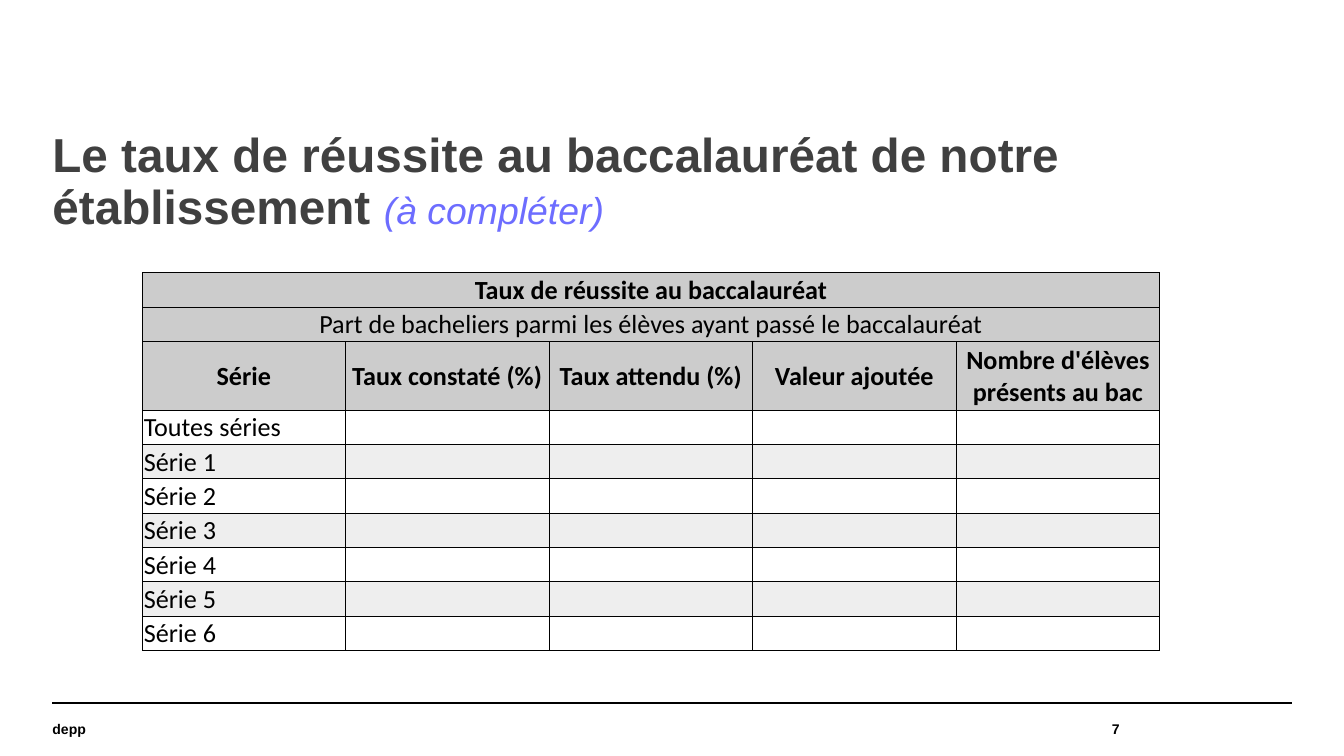
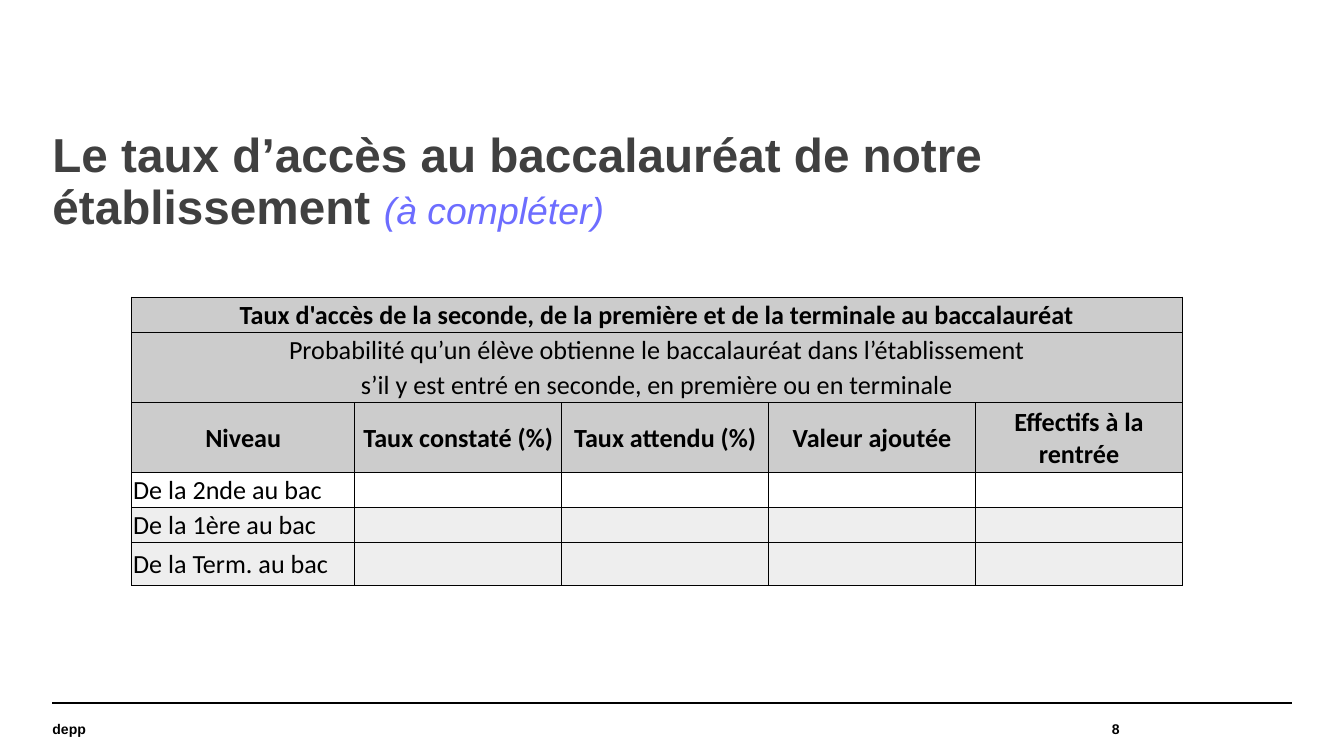
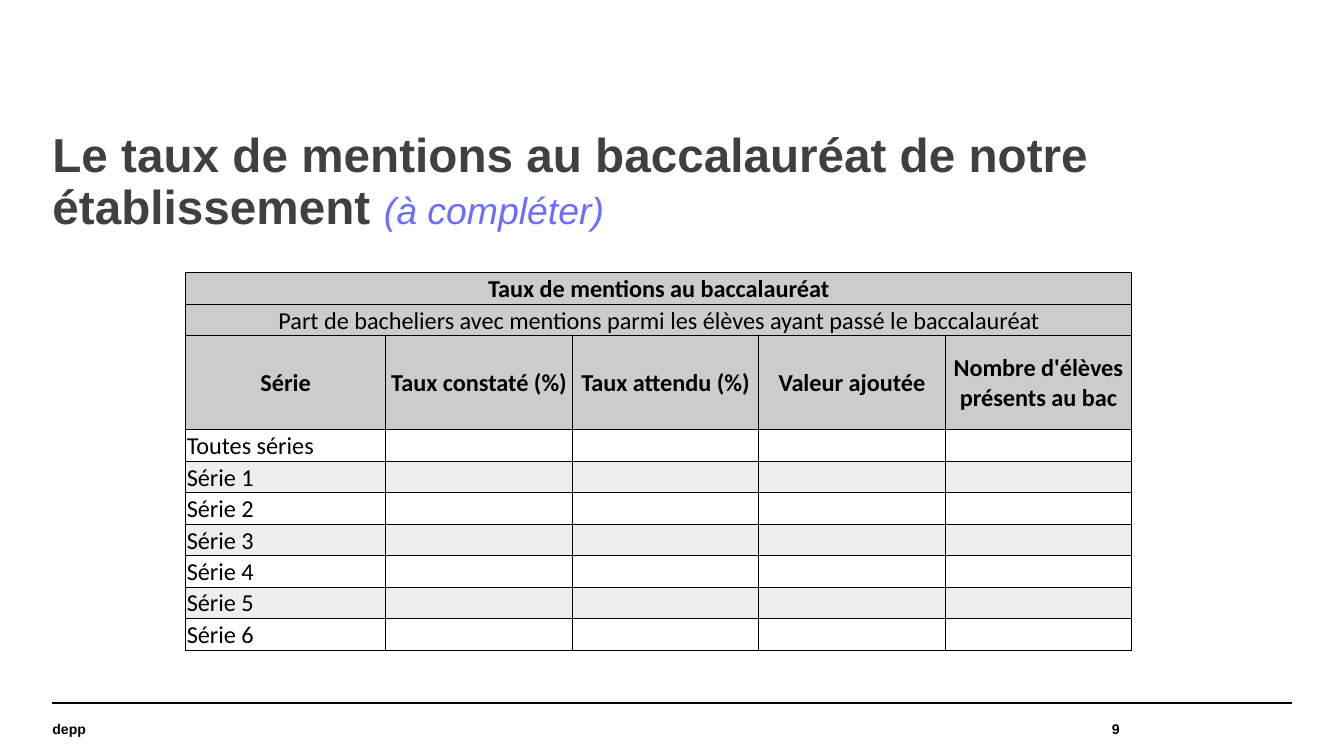
from lxml.etree import SubElement
from pptx import Presentation
from pptx.dml.color import RGBColor
from pptx.enum.shapes import MSO_CONNECTOR
from pptx.enum.text import MSO_ANCHOR, MSO_AUTO_SIZE, PP_ALIGN
from pptx.oxml.ns import qn
from pptx.util import Inches, Pt

BLACK = RGBColor(0x00, 0x00, 0x00)
TITLE_GREY = RGBColor(0x40, 0x40, 0x40)
NOTE_BLUE = RGBColor(0x6D, 0x6D, 0xFF)
HEADER_GREY = RGBColor(0xCC, 0xCC, 0xCC)
BAND_GREY = RGBColor(0xEE, 0xEE, 0xEE)

LEFT, RIGHT, FOOTER_TOP = 0.39, 9.61, 5.23
RATES = ["Taux constaté (%)", "Taux attendu (%)", "Valeur ajoutée"]
SERIES = ["Toutes séries"] + [f"Série {number}" for number in range(1, 7)]

# at: left, top, width, height; tall_rows: heights of the rows that differ
PAGES = [
    dict(title="Le taux de réussite au baccalauréat de notre établissement ",
         at=(1.06, 2.03, 7.57, 2.81), first_column=1.51, tall_rows={2: 0.51}, size=14,
         banners=["Taux de réussite au baccalauréat",
                  "Part de bacheliers parmi les élèves ayant passé le baccalauréat"],
         headings=["Série", *RATES, "Nombre d'élèves présents au bac"],
         labels=SERIES, shaded=(1, 3, 5)),
    dict(title="Le taux d’accès au baccalauréat de notre établissement ",
         at=(0.98, 2.21, 7.82, 2.15), first_column=1.66, tall_rows={3: 0.52, 6: 0.32}, size=14,
         banners=["Taux d'accès de la seconde, de la première et de la terminale au baccalauréat",
                  "Probabilité qu’un élève obtienne le baccalauréat dans l’établissement",
                  "s’il y est entré en seconde, en première ou en terminale"],
         headings=["Niveau", *RATES, "Effectifs à la rentrée"],
         labels=["De la 2nde au bac", "De la 1ère au bac", "De la Term. au bac"],
         shaded=(1, 2)),
    dict(title="Le taux de mentions au baccalauréat de notre établissement ",
         at=(1.38, 2.03, 7.04, 2.81), first_column=1.49, tall_rows={2: 0.7}, size=13,
         banners=["Taux de mentions au baccalauréat",
                  "Part de bacheliers avec mentions parmi les élèves ayant passé le baccalauréat"],
         headings=["Série", *RATES, "Nombre d'élèves présents au bac"],
         labels=SERIES, shaded=(1, 3, 5)),
]


def set_borders(cell, hidden):
    """Draw thin black borders, except on the sides listed in hidden."""
    properties = cell._tc.get_or_add_tcPr()
    for side in "LRTB":
        line = SubElement(properties, qn(f"a:ln{side}"), w=str(Pt(0.5)))
        if side in hidden:
            SubElement(line, qn("a:noFill"))
        else:
            fill = SubElement(line, qn("a:solidFill"))
            SubElement(fill, qn("a:srgbClr"), val=str(BLACK))


def add_footer_text(slide, text, left, width, alignment):
    box = slide.shapes.add_textbox(Inches(left), Inches(FOOTER_TOP), Inches(width), Inches(0.39))
    frame = box.text_frame
    frame.word_wrap = True
    frame.vertical_anchor = MSO_ANCHOR.MIDDLE
    frame.margin_left = frame.margin_right = frame.margin_top = frame.margin_bottom = 0
    para = frame.paragraphs[0]
    para.text = text
    para.alignment = alignment
    para.font.name, para.font.size, para.font.bold = "Arial", Pt(7.5), True
    para.font.color.rgb = BLACK


deck = Presentation()
deck.slide_width = Inches(10)
deck.slide_height = deck.slide_width * 9 // 16

for page_number, page in enumerate(PAGES, start=7):
    slide = deck.slides.add_slide(deck.slide_layouts[5])

    # Title
    title = slide.shapes.title
    title.left, title.top = Inches(LEFT), Inches(0.98)
    title.width, title.height = Inches(RIGHT - LEFT), Inches(0.79)
    frame = title.text_frame
    frame.word_wrap = True
    frame.auto_size = MSO_AUTO_SIZE.NONE
    frame.vertical_anchor = MSO_ANCHOR.TOP
    frame.margin_left = frame.margin_right = frame.margin_top = frame.margin_bottom = 0
    para = frame.paragraphs[0]
    para.alignment = PP_ALIGN.LEFT
    para.line_spacing = 0.9
    for text, size, color, is_note in [(page["title"], 25.5, TITLE_GREY, False),
                                       ("(à compléter)", 20, NOTE_BLUE, True)]:
        span = para.add_run()
        span.text = text
        span.font.name, span.font.size = "Arial", Pt(size)
        span.font.bold, span.font.italic = not is_note, is_note
        span.font.color.rgb = color

    # Footer
    rule = slide.shapes.add_connector(MSO_CONNECTOR.STRAIGHT, Inches(LEFT), Inches(FOOTER_TOP),
                                      Inches(RIGHT), Inches(FOOTER_TOP))
    rule.line.color.rgb = BLACK
    rule.line.width = Pt(0.8)
    SubElement(rule._element.spPr, qn("a:effectLst"))
    add_footer_text(slide, "depp", LEFT, 6.46, PP_ALIGN.LEFT)
    add_footer_text(slide, str(page_number), 6.85, 1.48, PP_ALIGN.RIGHT)

    # Table
    left, top, width, height = page["at"]
    banners, tall_rows = page["banners"], page["tall_rows"]
    heading_row = len(banners)
    rows = [[text, "", "", "", ""] for text in banners] + [page["headings"]]
    rows += [[label, "", "", "", ""] for label in page["labels"]]
    table = slide.shapes.add_table(len(rows), 5, Inches(left), Inches(top),
                                   Inches(width), Inches(height)).table
    table.first_row = table.horz_banding = False
    for index, column in enumerate(table.columns):
        first = page["first_column"]
        column.width = Inches((width - first) / 4 if index else first)
    row_height = (height - sum(tall_rows.values())) / (len(rows) - len(tall_rows))
    for index, row in enumerate(table.rows):
        row.height = Inches(tall_rows.get(index, row_height))
    for index in range(heading_row):
        table.cell(index, 0).merge(table.cell(index, 4))

    for row_index, texts in enumerate(rows):
        is_header = row_index <= heading_row
        # Banners below the first read as one block
        hidden = "T" if 2 <= row_index < heading_row else ""
        hidden += "B" if 1 <= row_index < heading_row - 1 else ""
        for column_index, text in enumerate(texts):
            cell = table.cell(row_index, column_index)
            set_borders(cell, hidden)
            if is_header or row_index - heading_row - 1 in page["shaded"]:
                cell.fill.solid()
                cell.fill.fore_color.rgb = HEADER_GREY if is_header else BAND_GREY
            else:
                cell.fill.background()
            cell.margin_left = cell.margin_right = cell.margin_top = Inches(0.01)
            cell.margin_bottom = 0
            cell.vertical_anchor = MSO_ANCHOR.MIDDLE
            para = cell.text_frame.paragraphs[0]
            para.alignment = PP_ALIGN.CENTER if is_header else PP_ALIGN.LEFT
            para.font.name, para.font.size = "Calibri", Pt(page["size"])
            para.font.bold = row_index in (0, heading_row)
            para.font.color.rgb = BLACK
            if text:
                para.add_run().text = text
            else:
                SubElement(para._p, qn("a:endParaRPr"), sz=str(page["size"] * 100))

deck.save("out.pptx")
